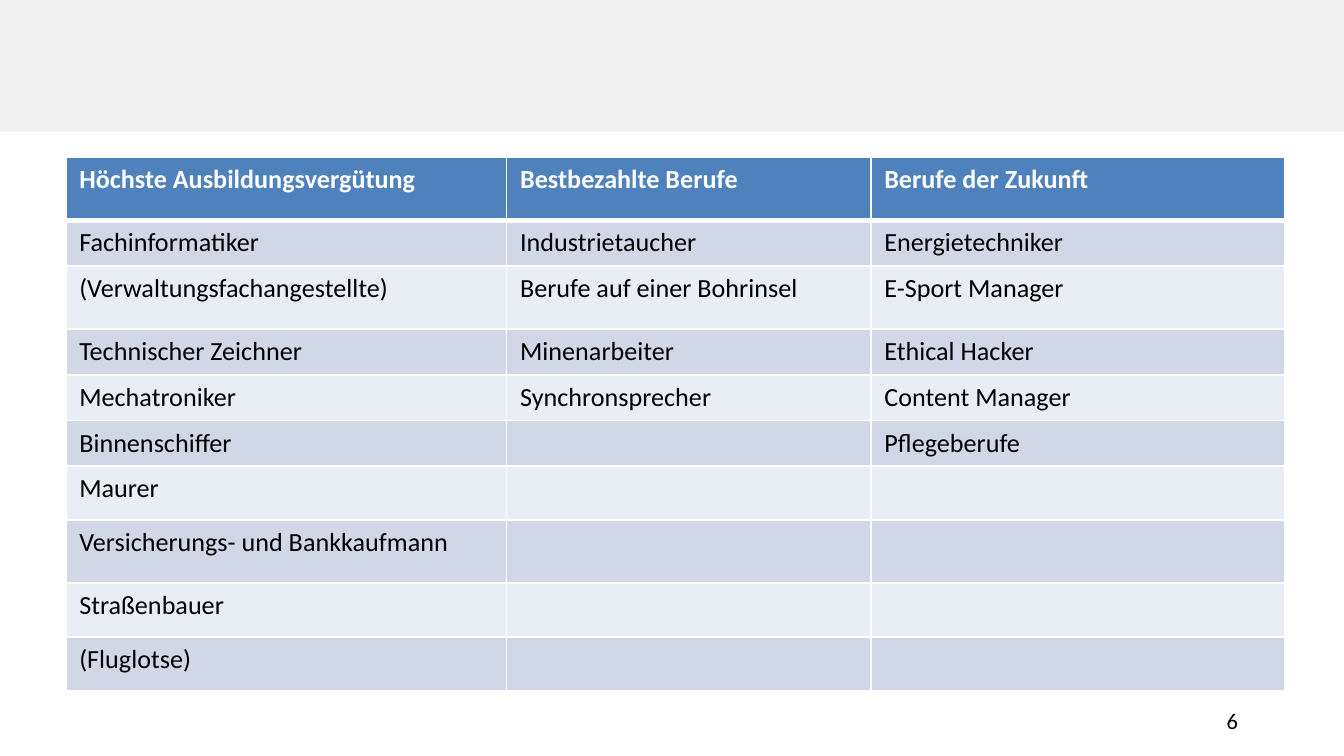
from lxml import etree
from pptx import Presentation
from pptx.dml.color import RGBColor
from pptx.enum.shapes import MSO_SHAPE
from pptx.enum.text import MSO_ANCHOR, PP_ALIGN
from pptx.oxml.ns import qn
from pptx.util import Inches, Pt

RECTANGLE = MSO_SHAPE.RECTANGLE
MIDDLE = MSO_ANCHOR.MIDDLE
LEFT, RIGHT = PP_ALIGN.LEFT, PP_ALIGN.RIGHT

FONT = "Calibri"
SLIDE_WIDTH = 10
SLIDE_HEIGHT = SLIDE_WIDTH * 9 / 16
COLORS = {
    "band": "F0F0F0",
    "header": "4F81BD",
    "odd_row": "D0D8E8",
    "even_row": "E9EDF4",
    "white": "FFFFFF",
    "black": "000000",
}
COLUMN_WIDTHS = [3.28, 2.71, 3.08]
ROW_HEIGHTS = [0.47, 0.34, 0.47, 0.34, 0.34, 0.34, 0.4, 0.47, 0.4, 0.4]
OCCUPATIONS = [
    ["Höchste Ausbildungsvergütung", "Bestbezahlte Berufe", "Berufe der Zukunft"],
    ["Fachinformatiker", "Industrietaucher", "Energietechniker"],
    ["(Verwaltungsfachangestellte)", "Berufe auf einer Bohrinsel", "E-Sport Manager"],
    ["Technischer Zeichner", "Minenarbeiter", "Ethical Hacker"],
    ["Mechatroniker", "Synchronsprecher", "Content Manager"],
    ["Binnenschiffer", "", "Pflegeberufe"],
    ["Maurer", "", ""],
    ["Versicherungs- und Bankkaufmann", "", ""],
    ["Straßenbauer", "", ""],
    ["(Fluglotse)", "", ""],
]


def rgb(name):
    """Return the named palette colour."""
    return RGBColor.from_string(COLORS[name])


def write_text(text_frame, text, size=14, color="black", bold=False, align=LEFT):
    """Write one formatted paragraph, sizing its end mark when it is empty."""
    paragraph = text_frame.paragraphs[0]
    paragraph.alignment = align
    if not text:
        etree.SubElement(paragraph._p, qn("a:endParaRPr"), sz=str(size * 100))
        return
    run = paragraph.add_run()
    run.text = text
    run.font.name = FONT
    run.font.size = Pt(size)
    run.font.bold = bold
    run.font.color.rgb = rgb(color)


def add_band(slide):
    """Add the grey band across the top."""
    band = slide.shapes.add_shape(RECTANGLE, 0, 0, Inches(SLIDE_WIDTH), Inches(0.98))
    band.shadow.inherit = False
    band.fill.solid()
    band.fill.fore_color.rgb = rgb("band")
    band.line.fill.background()


def add_page_number(slide, number):
    """Add the right-aligned page number."""
    box = slide.shapes.add_textbox(Inches(7.06), Inches(5.21), Inches(2.25), Inches(0.3))
    box.text_frame.word_wrap = True
    box.text_frame.vertical_anchor = MIDDLE
    write_text(box.text_frame, number, size=12, align=RIGHT)


def set_borders(cell, top=1, bottom=1):
    """Give a cell white borders with the given top and bottom widths in points."""
    properties = cell._tc.get_or_add_tcPr()
    for side, width in (("L", 1), ("R", 1), ("T", top), ("B", bottom)):
        line = etree.SubElement(properties, qn(f"a:ln{side}"), w=str(Pt(width)))
        fill = etree.SubElement(line, qn("a:solidFill"))
        etree.SubElement(fill, qn("a:srgbClr"), val=COLORS["white"])


def format_cell(cell, text, row):
    """Fill, border and label a cell according to its row."""
    is_header = row == 0
    set_borders(cell, top=3 if row == 1 else 1, bottom=3 if is_header else 1)
    cell.fill.solid()
    cell.fill.fore_color.rgb = rgb("header" if is_header else "odd_row" if row % 2 else "even_row")
    write_text(cell.text_frame, text, color="white" if is_header else "black", bold=is_header)


def add_occupation_table(slide):
    """Add the table of occupations."""
    frame = slide.shapes.add_table(
        len(ROW_HEIGHTS), len(COLUMN_WIDTHS), Inches(0.49), Inches(1.17),
        Inches(sum(COLUMN_WIDTHS)), Inches(sum(ROW_HEIGHTS)),
    )
    table = frame.table
    for column, width in zip(table.columns, COLUMN_WIDTHS):
        column.width = Inches(width)
    for row, height in zip(table.rows, ROW_HEIGHTS):
        row.height = Inches(height)
    for row, texts in enumerate(OCCUPATIONS):
        for column, text in enumerate(texts):
            format_cell(table.cell(row, column), text, row)


def main():
    """Build and save the slide."""
    presentation = Presentation()
    presentation.slide_width = Inches(SLIDE_WIDTH)
    presentation.slide_height = Inches(SLIDE_HEIGHT)
    slide = presentation.slides.add_slide(presentation.slide_layouts[6])
    add_band(slide)
    add_page_number(slide, "6")
    add_occupation_table(slide)
    presentation.save("out.pptx")


if __name__ == "__main__":
    main()
